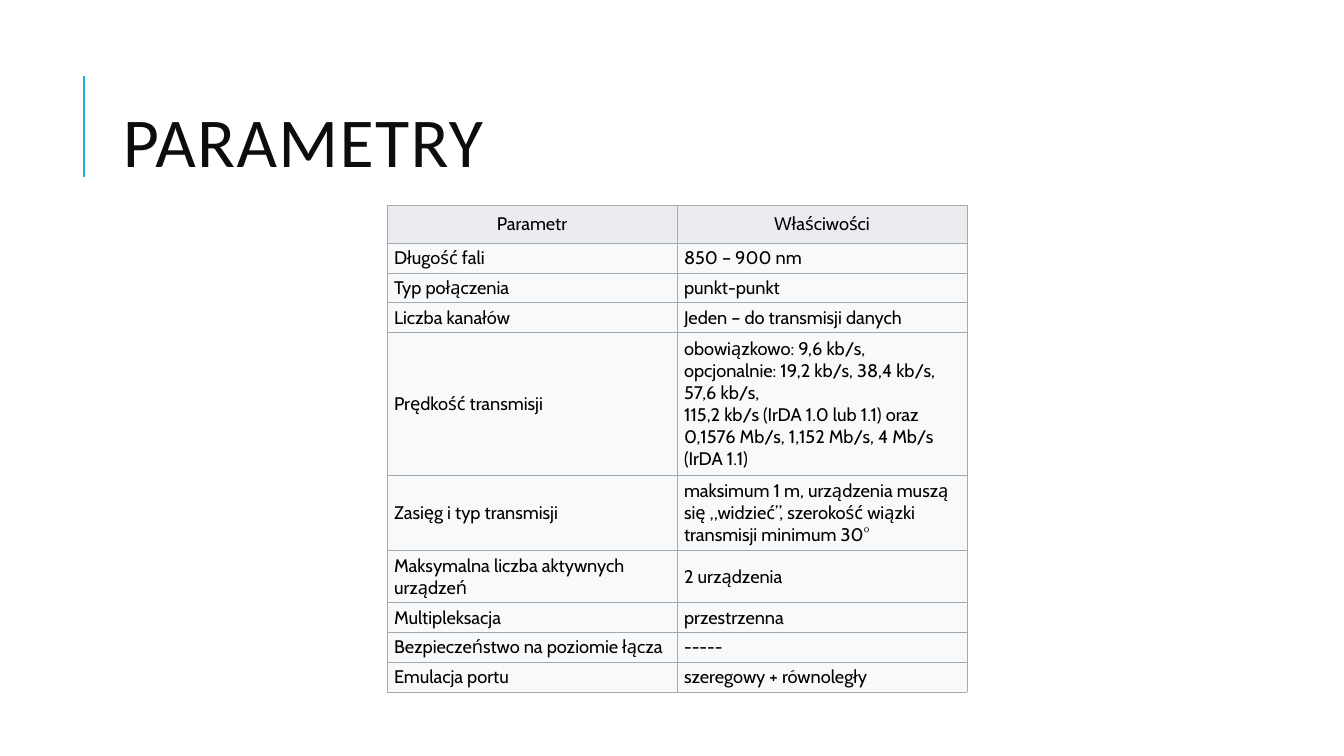
import pptx
import pptx.util
import pptx.dml.color
import pptx.enum.shapes
import pptx.enum.text
import pptx.oxml
import pptx.oxml.ns
from dataclasses import dataclass

Cm, Pt = pptx.util.Cm, pptx.util.Pt
MIDDLE = pptx.enum.text.MSO_ANCHOR.MIDDLE
ALIGN = pptx.enum.text.PP_ALIGN


@dataclass(frozen=True)
class Theme:
    accent: str = "1CADE4"
    title: str = "0D0D0D"
    text: str = "000000"
    head: str = "EAECF0"
    body: str = "F8F9FA"
    border: str = "A2A9B1"
    title_font: str = "Calibri"
    table_font: str = "Cabin"
    title_size: float = 50
    table_size: float = 13
    rule: float = 1.5
    edge: float = 0.6


THEME = Theme()

ROWS = [
    ("Parametr", "Właściwości"),
    ("Długość fali", "850 – 900 nm"),
    ("Typ połączenia", "punkt-punkt"),
    ("Liczba kanałów", "Jeden – do transmisji danych"),
    ("Prędkość transmisji",
     "obowiązkowo: 9,6 kb/s, opcjonalnie: 19,2 kb/s, 38,4 kb/s, 57,6 kb/s,\n"
     "115,2 kb/s (IrDA 1.0 lub 1.1) oraz 0,1576 Mb/s, 1,152 Mb/s, 4 Mb/s (IrDA 1.1)"),
    ("Zasięg i typ transmisji",
     "maksimum 1 m, urządzenia muszą się „widzieć”, "
     "szerokość wiązki transmisji minimum 30°"),
    ("Maksymalna liczba aktywnych urządzeń", "2 urządzenia"),
    ("Multipleksacja", "przestrzenna"),
    ("Bezpieczeństwo na poziomie łącza", "-----"),
    ("Emulacja portu", "szeregowy + równoległy"),
]
LOW = 0.75
TALL = {0: 0.95, 4: 3.6, 5: 1.89, 6: 1.32}


def color(code):
    return pptx.dml.color.RGBColor.from_string(code)


def write(para, text, font, size, code):
    """Add one run per line of text, with breaks between them."""
    for i, line in enumerate(text.split("\n")):
        if i:
            para.add_line_break()
        run = para.add_run()
        run.text = line
        run.font.name = font
        run.font.size = Pt(size)
        run.font.color.rgb = color(code)
    return run


def edge(cell):
    """Draw the four borders of a cell, ahead of its fill."""
    props = cell._tc.get_or_add_tcPr()
    for i, side in enumerate("LRTB"):
        props.insert(i, pptx.oxml.parse_xml(
            f'<a:ln{side} {pptx.oxml.ns.nsdecls("a")} w="{Pt(THEME.edge)}">'
            f'<a:solidFill><a:srgbClr val="{THEME.border}"/></a:solidFill>'
            f'</a:ln{side}>'))


def title(slide, text, left, top, width, height):
    x, mid, half = left - 0.73, top + height / 2 - 0.52, 1.27
    rule = slide.shapes.add_connector(
        pptx.enum.shapes.MSO_CONNECTOR.STRAIGHT,
        Cm(x), Cm(mid + half), Cm(x), Cm(mid - half))
    rule.line.color.rgb = color(THEME.accent)
    rule.line.width = Pt(THEME.rule)
    rule._element.spPr.append(pptx.oxml.parse_xml(
        f'<a:effectLst {pptx.oxml.ns.nsdecls("a")}/>'))

    box = slide.shapes.add_textbox(Cm(left), Cm(top), Cm(width), Cm(height))
    frame = box.text_frame
    frame.word_wrap = True
    frame.vertical_anchor = MIDDLE
    para = frame.paragraphs[0]
    para.line_spacing = 0.8
    run = write(para, text, THEME.title_font, THEME.title_size, THEME.title)
    run.font._element.set("spc", "100")


def table(slide, rows, left, top, width):
    tall = [TALL.get(i, LOW) for i in range(len(rows))]
    grid = slide.shapes.add_table(len(rows), len(rows[0]), Cm(left), Cm(top),
                                  Cm(width), Cm(sum(tall))).table
    grid.horz_banding = False
    for col in grid.columns:
        col.width = Cm(width / len(rows[0]))
    for r, texts in enumerate(rows):
        grid.rows[r].height = Cm(tall[r])
        for c, text in enumerate(texts):
            cell = grid.cell(r, c)
            cell.fill.solid()
            cell.fill.fore_color.rgb = color(THEME.body if r else THEME.head)
            edge(cell)
            cell.vertical_anchor = MIDDLE
            cell.margin_left = cell.margin_right = Cm(0.18)
            cell.margin_top = cell.margin_bottom = Cm(0.09)
            para = cell.text_frame.paragraphs[0]
            para.alignment = ALIGN.LEFT if r else ALIGN.CENTER
            run = write(para, text, THEME.table_font, THEME.table_size, THEME.text)
            run.font.bold = False
    # The header style would make the first row bold and white.
    grid.first_row = False


def main():
    deck = pptx.Presentation()
    deck.slide_width, deck.slide_height = Cm(33.87), Cm(19.05)
    slide = deck.slides.add_slide(deck.slide_layouts[6])
    title(slide, "PARAMETRY", 2.85, 1.63, 27, 4.17)
    table(slide, ROWS, 9.75, 5.18, 14.62)
    deck.save("out.pptx")


if __name__ == "__main__":
    main()
